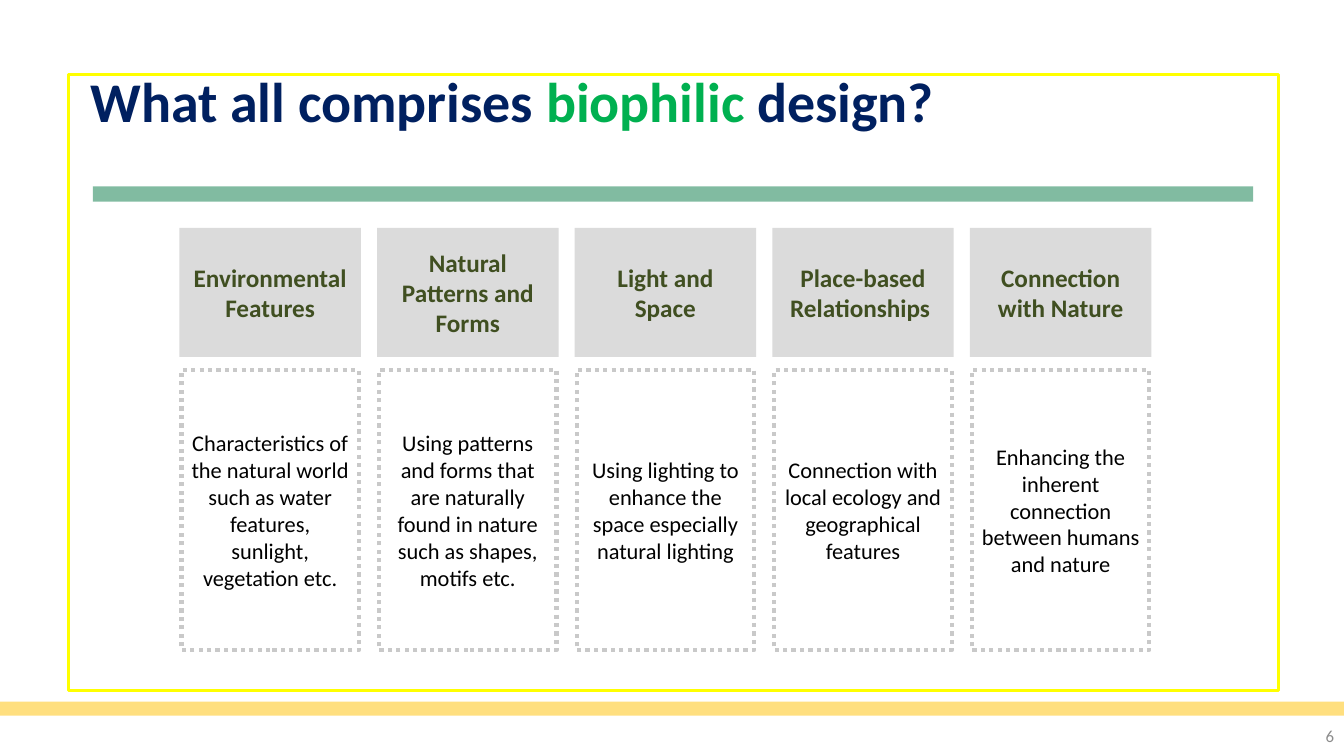
import dataclasses

import pptx
import pptx.dml.color
import pptx.enum.dml
import pptx.enum.shapes
import pptx.enum.text
import pptx.oxml
import pptx.oxml.ns
import pptx.util


@dataclasses.dataclass(frozen=True)
class Theme:
    font: str = "Calibri"
    navy: str = "002060"
    leaf: str = "00B050"
    forest: str = "047845"
    olive: str = "404F21"
    black: str = "000000"
    muted: str = "8C8C8C"
    silver: str = "DBDBDB"
    dots: str = "C9C9C9"
    gold: str = "FFC000"
    yellow: str = "FFFF00"
    title_size: int = 40
    heading_size: int = 18
    detail_size: int = 16
    number_size: int = 12


@dataclasses.dataclass(frozen=True)
class Grid:
    left: float = 1.78
    pitch: float = 1.96
    heading_width: float = 1.8
    heading_top: float = 2.26
    heading_height: float = 1.28
    detail_inset: float = 0.02
    detail_top: float = 3.67
    detail_height: float = 2.78

    def heading(self, column):
        return (self.left + column * self.pitch, self.heading_top,
                self.heading_width, self.heading_height)

    def detail(self, column):
        return (self.left + column * self.pitch + self.detail_inset, self.detail_top,
                self.heading_width - 2 * self.detail_inset, self.detail_height)


THEME = Theme()
GRID = Grid()
PAGE_WIDTH, PAGE_HEIGHT = 13.33, 7.5
ALIGN = pptx.enum.text.PP_ALIGN

ELEMENTS = [
    ("Environmental Features",
     "Characteristics of the natural world such as water features, sunlight, vegetation etc."),
    ("Natural Patterns and Forms",
     "Using patterns and forms that are naturally found in nature such as shapes, motifs etc."),
    ("Light and Space",
     "Using lighting to enhance the space especially natural lighting"),
    ("Place-based Relationships ",
     "Connection with local ecology and geographical features"),
    ("Connection with Nature",
     "Enhancing the inherent connection between humans and nature"),
]


def rgb(color):
    return pptx.dml.color.RGBColor.from_string(color)


def apply(target, formats):
    for name, value in formats.items():
        setattr(target, name, value)


def place(area):
    return [pptx.util.Inches(length) for length in area]


def add_box(page, area, fill=None, opacity=100, line=None, line_width=2, dash=None):
    box = page.shapes.add_shape(pptx.enum.shapes.MSO_SHAPE.RECTANGLE, *place(area))
    box.shadow.inherit = False
    if fill:
        box.fill.solid()
        box.fill.fore_color.rgb = rgb(fill)
        if opacity < 100:
            color = box.fill._xPr.find(".//" + pptx.oxml.ns.qn("a:srgbClr"))
            color.append(pptx.oxml.parse_xml(
                f'<a:alpha {pptx.oxml.ns.nsdecls("a")} val="{opacity * 1000}"/>'))
    else:
        box.fill.background()
    if line:
        box.line.color.rgb = rgb(line)
        apply(box.line, {"width": pptx.util.Pt(line_width), "dash_style": dash})
    else:
        box.line.fill.background()
    return box


def write(box, spans, size, align, bold=False, spacing=1.0, inset=0.1):
    apply(box.text_frame, {
        "word_wrap": True,
        "vertical_anchor": pptx.enum.text.MSO_ANCHOR.MIDDLE,
        "margin_left": pptx.util.Inches(inset),
        "margin_right": pptx.util.Inches(inset),
    })
    para = box.text_frame.paragraphs[0]
    apply(para, {"alignment": align, "line_spacing": spacing})
    for text, color in spans:
        span = para.add_run()
        span.text = text
        apply(span.font, {"name": THEME.font, "size": pptx.util.Pt(size), "bold": bold})
        span.font.color.rgb = rgb(color)


def add_label(page, area, spans, size, align, **formats):
    write(page.shapes.add_textbox(*place(area)), spans, size, align, **formats)


def add_element(page, column, heading, detail):
    write(add_box(page, GRID.heading(column), fill=THEME.silver),
          [(heading, THEME.olive)], THEME.heading_size, ALIGN.CENTER, bold=True)
    dotted = add_box(page, GRID.detail(column), line=THEME.dots, line_width=3,
                     dash=pptx.enum.dml.MSO_LINE.ROUND_DOT)
    write(dotted, [(detail, THEME.black)], THEME.detail_size, ALIGN.CENTER, inset=0.09)


def main():
    deck = pptx.Presentation()
    apply(deck, {"slide_width": pptx.util.Inches(PAGE_WIDTH),
                 "slide_height": pptx.util.Inches(PAGE_HEIGHT)})
    page = deck.slides.add_slide(deck.slide_layouts[6])

    add_box(page, (0, 6.96, PAGE_WIDTH, 0.14), fill=THEME.gold, opacity=50)
    add_box(page, (0.68, 0.74, 12, 6.11), line=THEME.yellow)
    add_box(page, (0.92, 1.85, 11.51, 0.15), fill=THEME.forest, opacity=50)
    add_label(page, (0.8, 0.67, 11.5, 0.73),
              [("What all comprises ", THEME.navy), ("biophilic", THEME.leaf),
               (" design?", THEME.navy)],
              THEME.title_size, ALIGN.LEFT, bold=True, spacing=0.9)
    add_label(page, (12.3, 7.1, 1.03, 0.39), [("6", THEME.muted)],
              THEME.number_size, ALIGN.RIGHT)
    for column, (heading, detail) in enumerate(ELEMENTS):
        add_element(page, column, heading, detail)

    deck.save("out.pptx")


if __name__ == "__main__":
    main()
